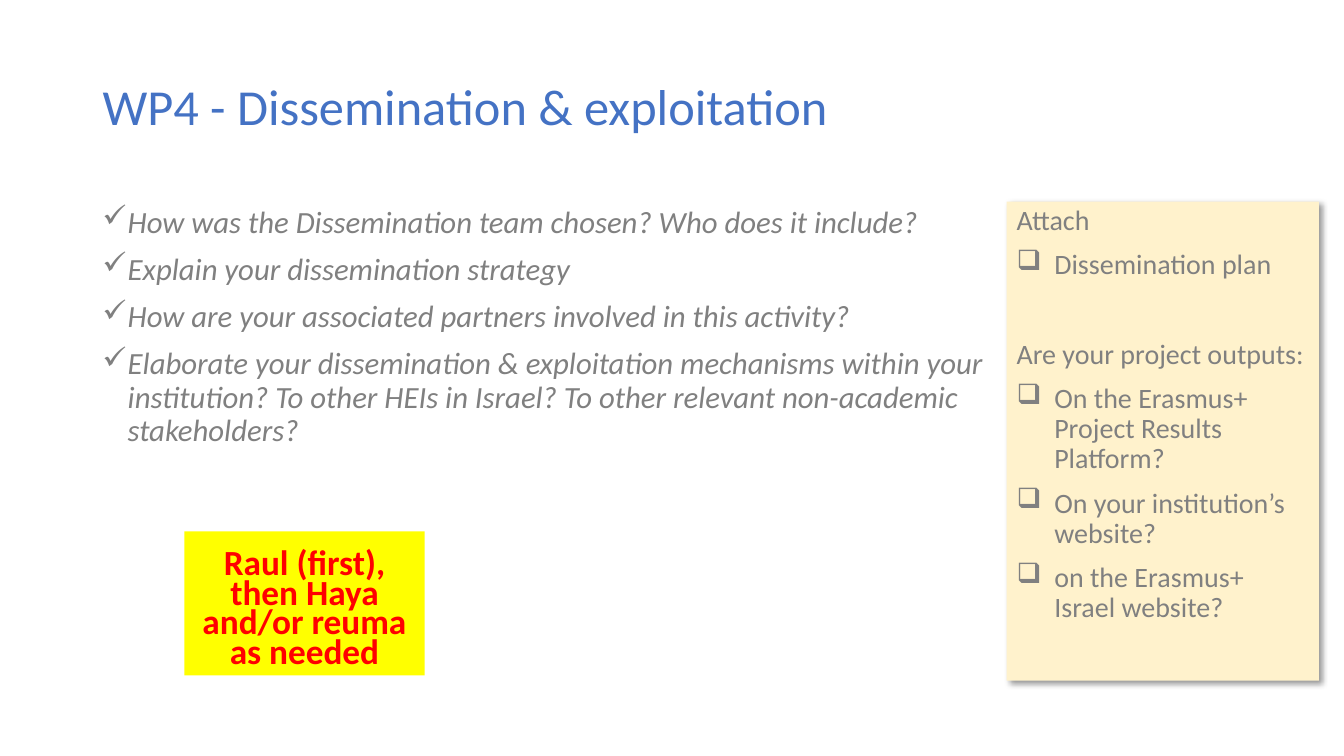
import lxml.etree
import pptx
import pptx.dml.color
import pptx.enum.shapes
import pptx.enum.text
import pptx.oxml
import pptx.oxml.ns
import pptx.util

Cm = pptx.util.Cm
Pt = pptx.util.Pt
ALIGN = pptx.enum.text.PP_ALIGN
ANCHOR = pptx.enum.text.MSO_ANCHOR

BLUE = "4472C4"
GREY = "808080"
CREAM = "FFF2CC"
YELLOW = "FFFF00"
RED = "FF0000"

QUESTIONS = [
    "How was the Dissemination team chosen? Who does it include?",
    "Explain your dissemination strategy",
    "How are your associated partners involved in this activity?",
    "Elaborate your dissemination & exploitation mechanisms within your institution? "
    "To other HEIs in Israel? To other relevant non-academic stakeholders?",
]
ATTACHMENTS = ["Dissemination plan"]
OUTPUTS = [
    "On the Erasmus+ Project Results Platform?",
    "On your institution’s website?",
    "on the Erasmus+ Israel website?",
]


def color(value):
    return pptx.dml.color.RGBColor.from_string(value)


class SlideBuilder:
    """Hold the deck style and the current slide, and add each kind of element."""

    font = "Calibri"
    spacing = 0.9
    gap = 10

    def __init__(self, presentation):
        self.slide = presentation.slides.add_slide(presentation.slide_layouts[5])

    def format_paragraph(self, paragraph, size, hex_color, bold=False, italic=False):
        paragraph.line_spacing = self.spacing
        for run in paragraph.runs:
            run.font.name = self.font
            run.font.size = Pt(size)
            run.font.color.rgb = color(hex_color)
            run.font.bold = bold
            run.font.italic = italic

    def title(self, text, left, top, width, height):
        shape = self.slide.shapes.title
        shape.left, shape.top, shape.width, shape.height = left, top, width, height
        frame = shape.text_frame
        frame.text = text
        frame.auto_size = pptx.enum.text.MSO_AUTO_SIZE.NONE
        frame.vertical_anchor = ANCHOR.MIDDLE
        frame.paragraphs[0].alignment = ALIGN.LEFT
        self.format_paragraph(frame.paragraphs[0], 36, BLUE)

    def text_box(self, left, top, width, height):
        shape = self.slide.shapes.add_textbox(left, top, width, height)
        shape.text_frame.word_wrap = True
        return shape

    def panel(self, fill, left, top, width, height, anchor=ANCHOR.TOP):
        rectangle = pptx.enum.shapes.MSO_SHAPE.RECTANGLE
        shape = self.slide.shapes.add_shape(rectangle, left, top, width, height)
        shape.shadow.inherit = False
        shape.fill.solid()
        shape.fill.fore_color.rgb = color(fill)
        shape.line.fill.background()
        shape.text_frame.word_wrap = True
        shape.text_frame.vertical_anchor = anchor
        return shape

    def drop_shadow(self, shape):
        effects = shape._element.spPr.find(pptx.oxml.ns.qn("a:effectLst"))
        effects.append(pptx.oxml.parse_xml(
            f'<a:outerShdw {pptx.oxml.ns.nsdecls("a")} blurRad="{Pt(4)}" dist="{Pt(3)}" '
            'dir="2700000" algn="tl" rotWithShape="0">'
            '<a:srgbClr val="000000"><a:alpha val="40000"/></a:srgbClr></a:outerShdw>'))

    def add_line(self, shape, text, size, bullet=None, indent=0, gap=None, italic=False):
        frame = shape.text_frame
        first = not frame.text
        paragraph = frame.paragraphs[0] if first else frame.add_paragraph()
        paragraph.text = text
        paragraph.alignment = ALIGN.LEFT
        if bullet:
            properties = paragraph._p.get_or_add_pPr()
            properties.set("marL", str(Cm(indent)))
            properties.set("indent", str(-Cm(indent)))
            mark = lxml.etree.SubElement(properties, pptx.oxml.ns.qn("a:buChar"))
            mark.set("char", bullet)
        if not first:
            paragraph.space_before = Pt(gap or self.gap)
        self.format_paragraph(paragraph, size, GREY, italic=italic)

    def note(self, text, left, top, width, height):
        shape = self.panel(YELLOW, left, top, width, height, ANCHOR.BOTTOM)
        shape.text_frame.text = text
        paragraph = shape.text_frame.paragraphs[0]
        paragraph.alignment = ALIGN.CENTER
        self.format_paragraph(paragraph, 25.2, RED, bold=True)
        paragraph.line_spacing = 0.7


def main():
    presentation = pptx.Presentation()
    presentation.slide_width = Cm(33.87)
    presentation.slide_height = Cm(19.05)
    builder = SlideBuilder(presentation)

    builder.title("WP4 - Dissemination & exploitation", Cm(2.33), Cm(0.91), Cm(29.21), Cm(3.68))

    questions = builder.text_box(Cm(2.33), Cm(5.08), Cm(22.76), Cm(12.09))
    for question in QUESTIONS:
        builder.add_line(questions, question, 22, "✓", 0.64, italic=True)

    checklist = builder.panel(CREAM, Cm(25.37), Cm(5.08), Cm(7.87), Cm(12.07))
    builder.drop_shadow(checklist)
    for heading, items in (("Attach", ATTACHMENTS), ("Are your project outputs:", OUTPUTS)):
        builder.add_line(checklist, heading, 20, gap=42)
        for item in items:
            builder.add_line(checklist, item, 20, "❑", 0.95)

    builder.note("Raul (first), then Haya and/or reuma as needed",
                 Cm(4.65), Cm(13.39), Cm(6.05), Cm(3.63))

    presentation.save("out.pptx")


if __name__ == "__main__":
    main()
